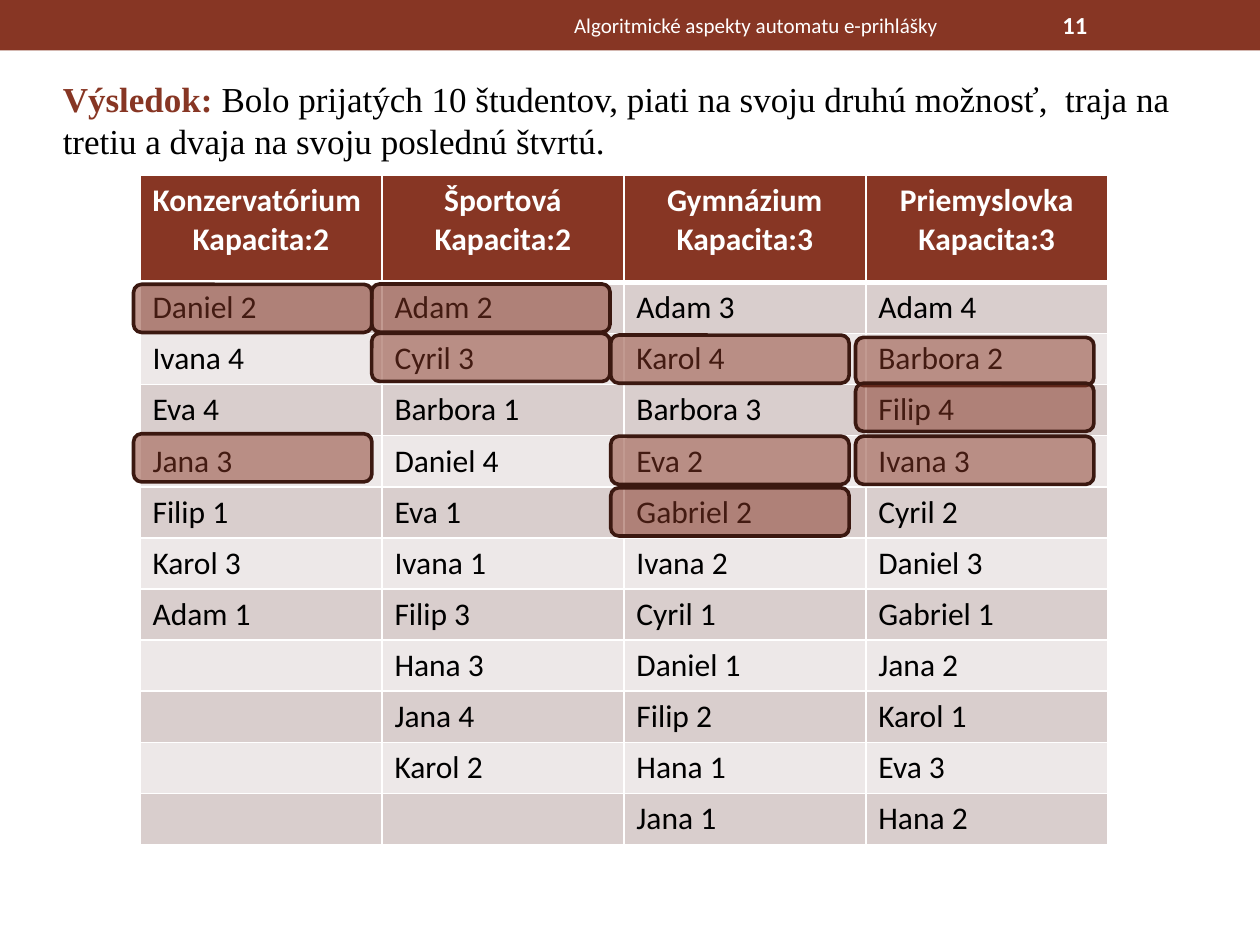
from lxml import etree
from pptx import Presentation
from pptx.dml import color
from pptx.enum import shapes, text
from pptx.oxml import ns
from pptx.util import Pt

BROWN, DARK, WHITE, BLACK = "873624", "3B1810", "FFFFFF", "000000"
BANDS = ["D9CECD", "EDE8E8"]


def rgb(value):
    return color.RGBColor.from_string(value)


def add_run(paragraph, words, size, ink, bold=False, face="Calibri"):
    run = paragraph.add_run()
    run.text = words
    run.font.name, run.font.size, run.font.bold = face, Pt(size), bold
    run.font.color.rgb = rgb(ink)


deck = Presentation()
deck.slide_width, deck.slide_height = Pt(720), Pt(540)
slide = deck.slides.add_slide(deck.slide_layouts[6])

bar = slide.shapes.add_shape(shapes.MSO_SHAPE.RECTANGLE, 0, 0, Pt(720), Pt(28.8))
bar.shadow.inherit = False
bar.fill.solid()
bar.fill.fore_color.rgb = rgb(BROWN)
bar.line.fill.background()

schools = [
    ("Konzervatórium", 2, ["Daniel 2", "Ivana 4", "Eva 4", "Jana 3", "Filip 1", "Karol 3", "Adam 1"]),
    ("Športová", 2, ["Adam 2", "Cyril 3", "Barbora 1", "Daniel 4", "Eva 1", "Ivana 1", "Filip 3",
                     "Hana 3", "Jana 4", "Karol 2"]),
    ("Gymnázium", 3, ["Adam 3", "Karol 4", "Barbora 3", "Eva 2", "Gabriel 2", "Ivana 2", "Cyril 1",
                      "Daniel 1", "Filip 2", "Hana 1", "Jana 1"]),
    ("Priemyslovka", 3, ["Adam 4", "Barbora 2", "Filip 4", "Ivana 3", "Cyril 2", "Daniel 3", "Gabriel 1",
                         "Jana 2", "Karol 1", "Eva 3", "Hana 2"]),
]
ranking = slide.shapes.add_table(12, 4, Pt(80), Pt(100.2), Pt(553), Pt(382.4)).table
for column in ranking.columns:
    column.width = Pt(138.25)
for index, row in enumerate(ranking.rows):
    row.height = Pt(29.2 if index else 61.2)

for col, (school, capacity, applicants) in enumerate(schools):
    heading = ranking.cell(0, col).text_frame
    add_run(heading.paragraphs[0], school, 18, WHITE, True)
    limit = heading.add_paragraph()
    add_run(limit, f"Kapacita:{capacity}", 18, WHITE, True)
    limit.alignment = text.PP_ALIGN.CENTER
    if col:
        heading.paragraphs[0].alignment = text.PP_ALIGN.CENTER
    for place, applicant in enumerate(applicants, 1):
        add_run(ranking.cell(place, col).text_frame.paragraphs[0], applicant, 18, BLACK)
    for index in range(12):
        cell = ranking.cell(index, col)
        cell.fill.solid()
        cell.fill.fore_color.rgb = rgb(BANDS[(index - 1) % 2] if index else BROWN)
        for order, side in enumerate(["lnL", "lnR", "lnT", "lnB"]):
            thick = (index, side) in [(0, "lnB"), (1, "lnT")]
            border = etree.Element(ns.qn(f"a:{side}"), w=str(Pt(3 if thick else 1)))
            solid = etree.SubElement(border, ns.qn("a:solidFill"))
            etree.SubElement(solid, ns.qn("a:srgbClr"), val=WHITE)
            cell._tc.get_or_add_tcPr().insert(order, border)

captions = [
    (600, 1.4, 84, 26, None, [("11", 14, WHITE, True)]),
    (270, 1.4, 324, 26, text.PP_ALIGN.CENTER, [("Algoritmické aspekty automatu e-prihlášky", 12, WHITE)]),
    (28.8, 41, 648, 55.4, None, [
        ("Výsledok:", 20, BROWN, True, "Times New Roman"),
        (" Bolo prijatých 10 študentov, piati na svoju druhú možnosť,  traja na tretiu a dvaja "
         "na svoju poslednú štvrtú.", 20, BLACK, False, "Times New Roman")]),
]
for left, top, width, height, alignment, runs in captions:
    frame = slide.shapes.add_textbox(Pt(left), Pt(top), Pt(width), Pt(height)).text_frame
    frame.word_wrap = True
    if top < 28.8:
        frame.vertical_anchor = text.MSO_ANCHOR.MIDDLE
    else:
        frame.auto_size = text.MSO_AUTO_SIZE.SHAPE_TO_FIT_TEXT
    frame.paragraphs[0].alignment = alignment
    for run in runs:
        add_run(frame.paragraphs[0], *run)

admitted = [
    (76.3, [162.5, 247.9]),
    (212.4, [162.3, 190.5]),
    (349, [191.5, 249.3, 278.8]),
    (488.9, [192.8, 219, 249.3]),
]
for left, tops in admitted:
    for top in tops:
        mark = slide.shapes.add_shape(shapes.MSO_SHAPE.ROUNDED_RECTANGLE, Pt(left), Pt(top), Pt(136.2), Pt(27.5))
        mark.shadow.inherit = False
        mark.fill.solid()
        mark.fill.fore_color.rgb = rgb(BROWN)
        tint = mark.fill._xPr.find(".//" + ns.qn("a:srgbClr"))
        etree.SubElement(tint, ns.qn("a:alpha"), val="50000")
        mark.line.color.rgb = rgb(DARK)
        mark.line.width = Pt(2.08)

deck.save("out.pptx")
